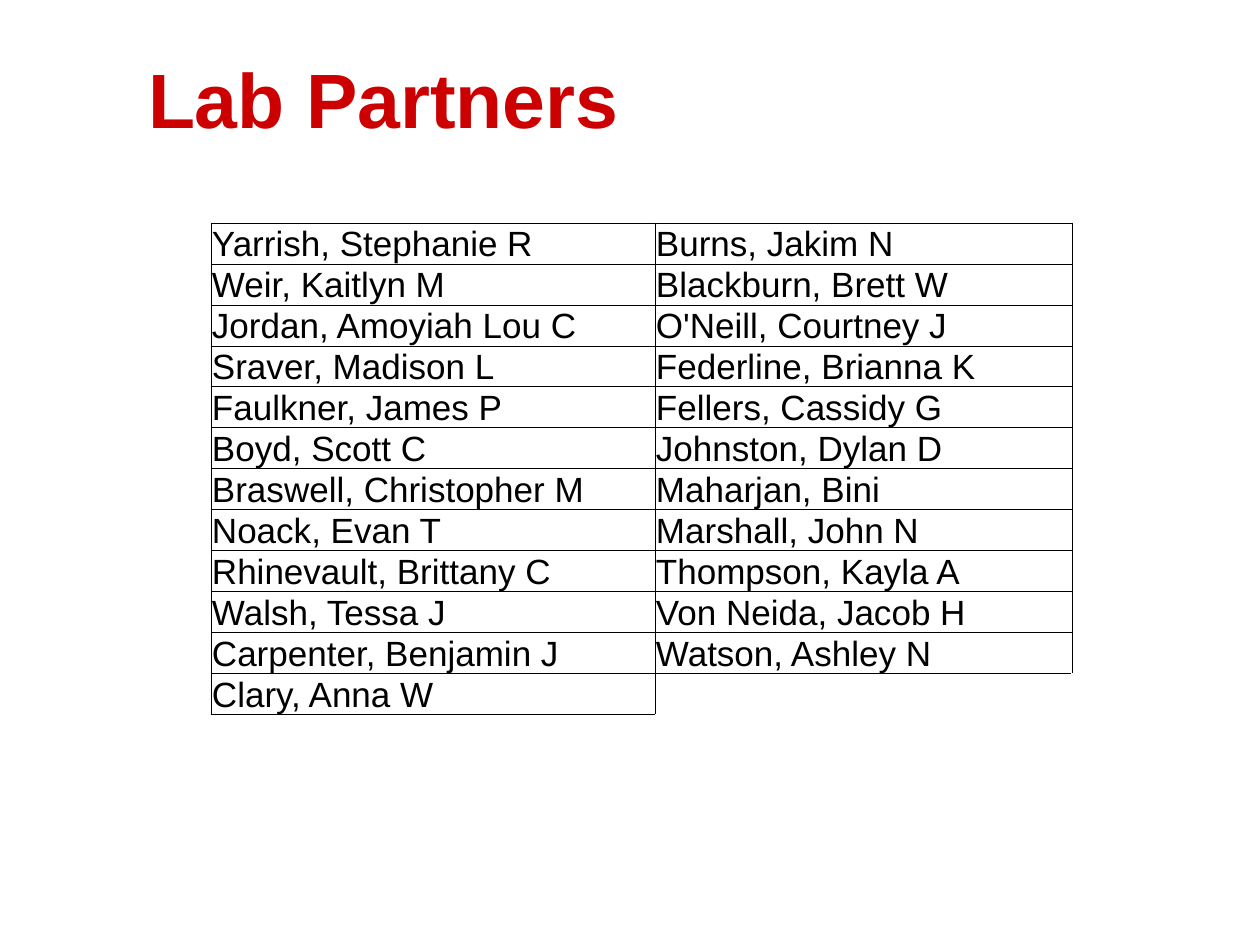
from lxml import etree
from pptx import Presentation
from pptx.dml.color import RGBColor
from pptx.enum.text import MSO_ANCHOR, PP_ALIGN
from pptx.oxml.ns import qn
from pptx.util import Pt

TOP, BOTTOM, LEFT = MSO_ANCHOR.TOP, MSO_ANCHOR.BOTTOM, PP_ALIGN.LEFT
PX = 914400 // 126
FONT = "Arial"


def color(hex_code):
    return RGBColor.from_string(hex_code)


def add_border(cell, side):
    line = etree.SubElement(cell._tc.get_or_add_tcPr(), qn(f"a:{side}"), w=str(Pt(0.5)))
    fill = etree.SubElement(line, qn("a:solidFill"))
    etree.SubElement(fill, qn("a:srgbClr"), val="000000")


prs = Presentation()
prs.slide_width, prs.slide_height = 1260 * PX, 945 * PX
slide = prs.slides.add_slide(prs.slide_layouts[5])

# Title
heading = slide.shapes.title
heading.left, heading.top, heading.width, heading.height = (
    136 * PX, 38 * PX, 1092 * PX, 157 * PX)
frame = heading.text_frame
frame.text = "Lab Partners"
frame.vertical_anchor = TOP
frame.margin_left, frame.margin_top = 12 * PX, 14 * PX
heading_line = frame.paragraphs[0]
heading_line.alignment = LEFT
heading_line.space_before = Pt(0)
heading_line.font.name = FONT
heading_line.font.size = Pt(44)
heading_line.font.bold = True
heading_line.font.color.rgb = color("CC0000")

# Lab partners, one pair per row
partners = [
    ("Yarrish, Stephanie R", "Burns, Jakim N"),
    ("Weir, Kaitlyn M", "Blackburn, Brett W"),
    ("Jordan, Amoyiah Lou C", "O'Neill, Courtney J"),
    ("Sraver, Madison L", "Federline, Brianna K"),
    ("Faulkner, James P", "Fellers, Cassidy G"),
    ("Boyd, Scott C", "Johnston, Dylan D"),
    ("Braswell, Christopher M", "Maharjan, Bini"),
    ("Noack, Evan T", "Marshall, John N"),
    ("Rhinevault, Brittany C", "Thompson, Kayla A"),
    ("Walsh, Tessa J", "Von Neida, Jacob H"),
    ("Carpenter, Benjamin J", "Watson, Ashley N"),
    ("Clary, Anna W", ""),
]
COLUMN_WIDTHS = (444, 417)
ROW_HEIGHT = 41

roster = slide.shapes.add_table(
    len(partners), 2, 211 * PX, 223 * PX,
    sum(COLUMN_WIDTHS) * PX, len(partners) * ROW_HEIGHT * PX).table
roster.first_row = roster.horz_banding = False
for column, width in zip(roster.columns, COLUMN_WIDTHS):
    column.width = width * PX

for row, pair in enumerate(partners):
    roster.rows[row].height = ROW_HEIGHT * PX
    for col, student in enumerate(pair):
        cell = roster.cell(row, col)
        cell.text = student
        cell.vertical_anchor = BOTTOM
        cell.margin_left = cell.margin_right = cell.margin_top = PX
        cell.margin_bottom = 0
        name_line = cell.text_frame.paragraphs[0]
        name_line.font.name = FONT
        name_line.font.size = Pt(20)
        name_line.font.color.rgb = color("000000")

        # The unpaired place only shares its neighbours' edges
        for side in ("lnL", "lnR", "lnT", "lnB") if student else ("lnL", "lnT"):
            add_border(cell, side)
        if student:
            cell.fill.solid()
            cell.fill.fore_color.rgb = color("FFFFFF")
        else:
            cell.fill.background()

prs.save("out.pptx")
